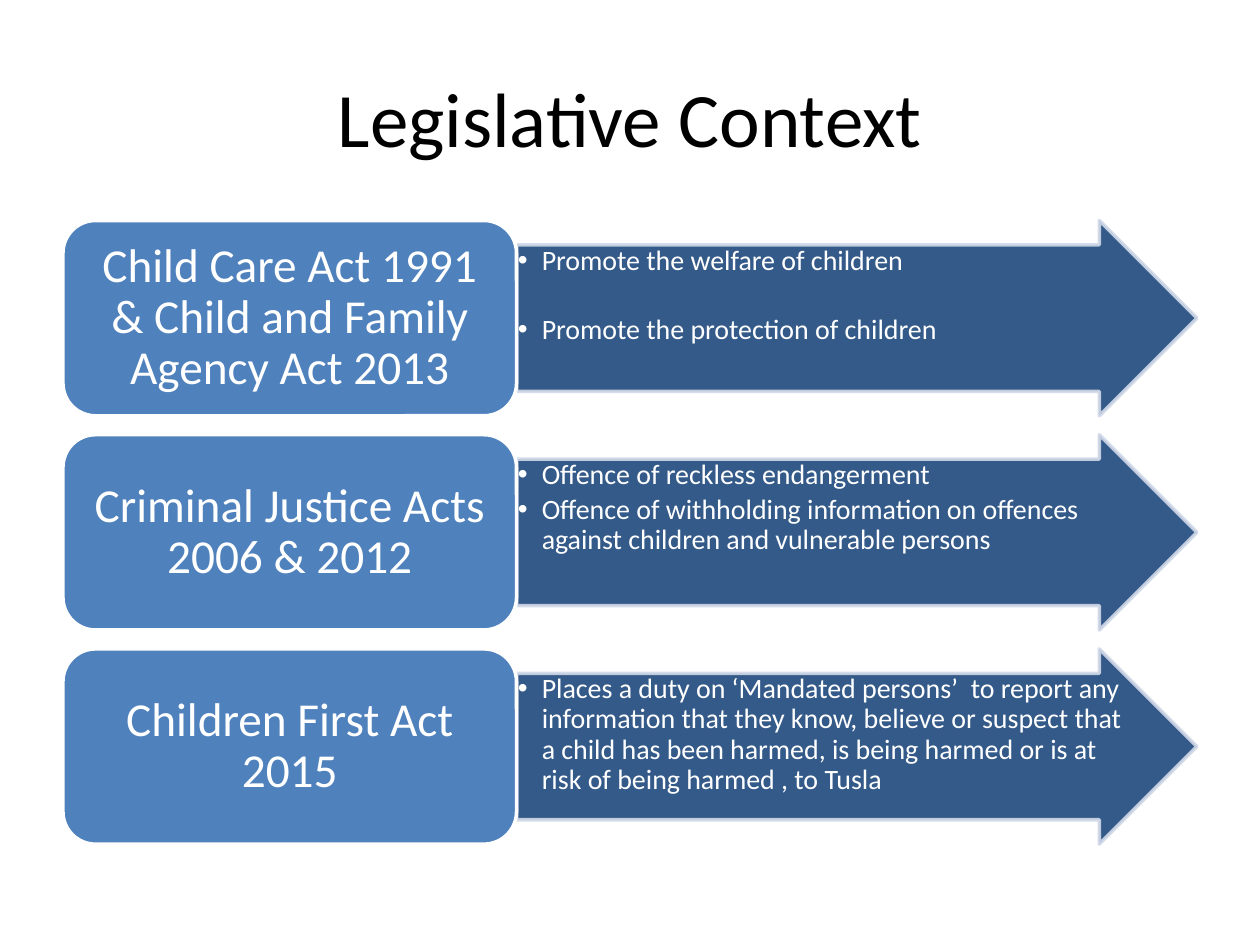
from lxml import etree
from pptx import Presentation
from pptx.dml.color import RGBColor
from pptx.enum import shapes, text
from pptx.oxml.ns import qn
from pptx.util import Inches, Pt

# Content: act, its points, space after each point (pt)
TITLE = "Legislative Context"
ACTS = [
    ("Child Care Act 1991 & Child and Family Agency Act 2013",
     ["Promote the welfare of children", "Promote the protection of children"], 22.3),
    ("Criminal Justice Acts 2006 & 2012",
     ["Offence of reckless endangerment",
      "Offence of withholding information on offences against children "
      "and vulnerable persons"], 2.9),
    ("Children First Act 2015",
     ["Places a duty on ‘Mandated persons’  to report any information that they "
      "know, believe or suspect that a child has been harmed, is being harmed "
      "or is at risk of being harmed , to Tusla"], 2.9),
]

BLACK = RGBColor(0x00, 0x00, 0x00)
WHITE = RGBColor(0xFF, 0xFF, 0xFF)
BLUE = RGBColor(0x4F, 0x81, 0xBD)
NAVY = RGBColor(0x1F, 0x49, 0x7D)
PALE = RGBColor(0xD0, 0xD8, 0xE8)

# Layout in inches
LEFT, TOP, HEIGHT, PITCH = 0.5, 1.75, 1.55, 1.7
ACT_WIDTH, ARROW_WIDTH = 3.6, 5.4
INDENT = 0.19

TITLE_FONT = {"name": "Calibri", "size": Pt(44)}
ACT_FONT = {"name": "Calibri", "size": Pt(27)}
POINT_FONT = {"name": "Calibri", "size": Pt(16)}
CENTRED = {"alignment": text.PP_ALIGN.CENTER}
ACT_PARA = {**CENTRED, "line_spacing": 0.9}
POINT_PARA = {"alignment": text.PP_ALIGN.LEFT, "line_spacing": 0.9}


def set_all(target, values):
    for name, value in values.items():
        setattr(target, name, value)


def write(shape, lines, font, color, layout, anchor, margins):
    frame = shape.text_frame
    frame.word_wrap = True
    frame.vertical_anchor = anchor
    for side, margin in zip(("left", "top", "right", "bottom"), margins):
        setattr(frame, f"margin_{side}", Inches(margin))
    for index, line in enumerate(lines):
        para = frame.paragraphs[0] if index == 0 else frame.add_paragraph()
        set_all(para, layout)
        span = para.add_run()
        span.text = line
        set_all(span.font, font)
        span.font.color.rgb = color
    return frame


def add_block(page, kind, left, top, width, fill, line):
    block = page.shapes.add_shape(kind, Inches(left), Inches(top),
                                  Inches(width), Inches(HEIGHT))
    block.shadow.inherit = False
    block.fill.solid()
    block.fill.fore_color.rgb = fill
    block.line.color.rgb = line
    block.line.width = Pt(2)
    return block


def soften(shape, percent):
    for color in shape.fill._xPr.iter(qn("a:srgbClr")):
        etree.SubElement(color, qn("a:alpha"), val=str(percent * 1000))


def add_bullet(para):
    props = para._p.get_or_add_pPr()
    props.set("marL", str(Inches(INDENT)))
    props.set("indent", str(-Inches(INDENT)))
    etree.SubElement(props, qn("a:buFont"), typeface="Arial")
    etree.SubElement(props, qn("a:buChar"), char="•")


def main():
    deck = Presentation()
    deck.slide_width, deck.slide_height = Inches(10), Inches(7.5)
    page = deck.slides.add_slide(deck.slide_layouts[6])

    # Title
    box = page.shapes.add_textbox(Inches(0.5), Inches(0.3), Inches(9), Inches(1.25))
    write(box, [TITLE], TITLE_FONT, BLACK, CENTRED, text.MSO_ANCHOR.MIDDLE,
          (0.1, 0.05, 0.1, 0.05))

    # One row per act: arrow with its points, then the act itself
    for row, (act, points, gap) in enumerate(ACTS):
        top = TOP + row * PITCH
        arrow = add_block(page, shapes.MSO_SHAPE.RIGHT_ARROW, LEFT + ACT_WIDTH, top,
                          ARROW_WIDTH, NAVY, PALE)
        arrow.adjustments[0], arrow.adjustments[1] = 0.75, 0.5
        soften(arrow, 90)
        frame = write(arrow, points, POINT_FONT, WHITE,
                      {**POINT_PARA, "space_after": Pt(gap)},
                      text.MSO_ANCHOR.TOP, (0.01, 0.01, 0.01, 0.01))
        for para in frame.paragraphs:
            add_bullet(para)

        label = add_block(page, shapes.MSO_SHAPE.ROUNDED_RECTANGLE, LEFT, top,
                          ACT_WIDTH, BLUE, WHITE)
        write(label, [act], ACT_FONT, WHITE, ACT_PARA, text.MSO_ANCHOR.MIDDLE,
              (0.11, 0.06, 0.11, 0.06))

    deck.save("out.pptx")


if __name__ == "__main__":
    main()
